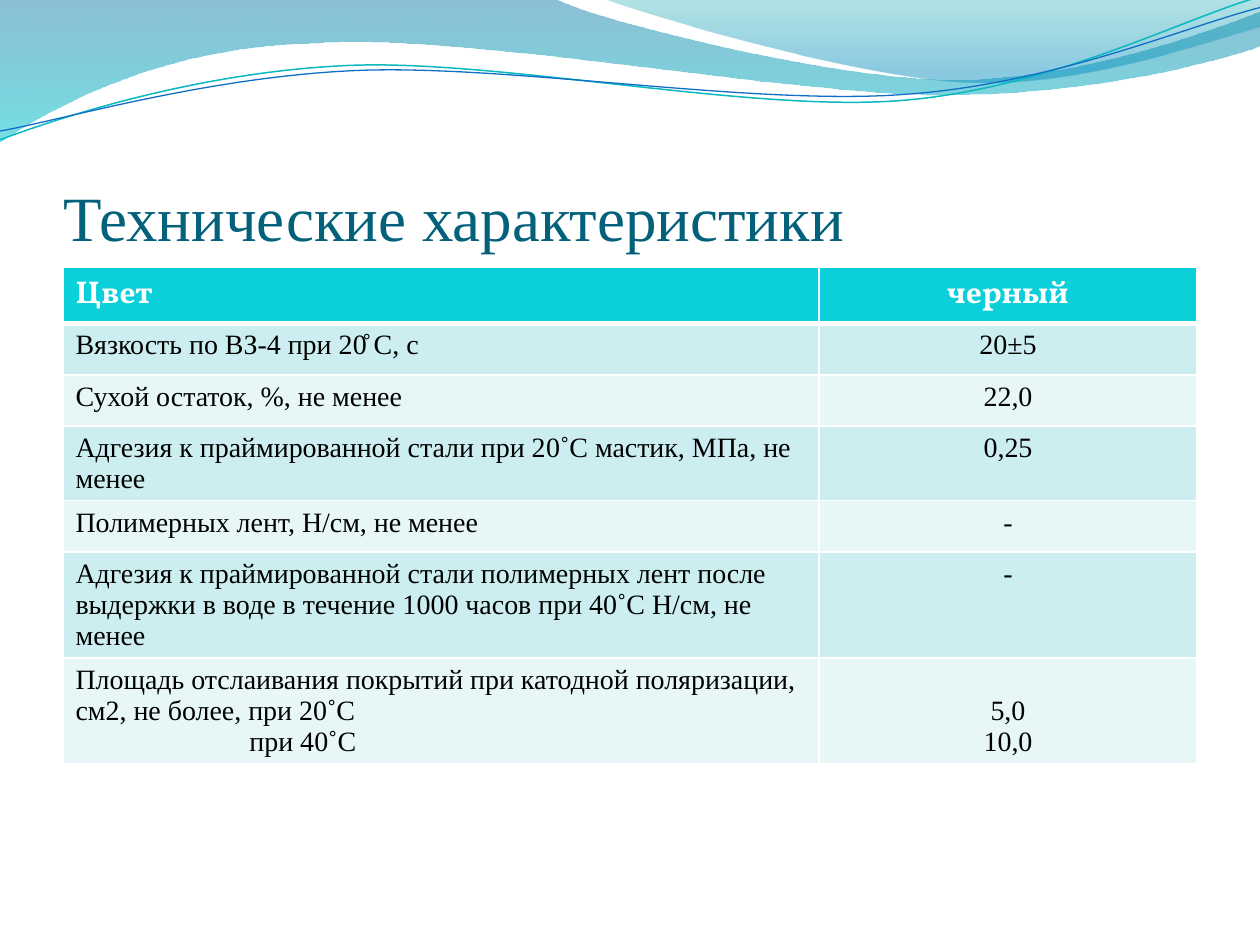
from lxml import etree
from pptx import Presentation
from pptx.dml.color import RGBColor
from pptx.enum.text import MSO_ANCHOR, MSO_AUTO_SIZE, PP_ALIGN
from pptx.oxml.ns import qn
from pptx.util import Inches, Pt

LEFT, CENTER = PP_ALIGN.LEFT, PP_ALIGN.CENTER
BOTTOM = MSO_ANCHOR.BOTTOM
SERIF, HEAD = "Times New Roman", "Vollkorn"
HEX = {"title": "04617B", "head": "0BD0D9", "odd": "CCEEF1", "even": "E7F7F8",
       "white": "FFFFFF", "black": "000000", "teal": "0AB8BF", "blue": "0F6FC6"}


def draw_wave(start, parts, close=False):
    """Draw parts from start: two numbers make a line, six a cubic curve."""
    form = slide.shapes.build_freeform(Inches(start[0]), Inches(start[1]))
    dots = [(Inches(part[i]), Inches(part[i + 1]))
            for part in parts for i in range(0, len(part), 2)]
    form.add_line_segments(dots, close=close)
    wave = form.convert_to_shape()
    wave.shadow.inherit = False
    # Join the three points of each curve into one cubic segment
    nodes = iter(list(wave.element.iter(qn("a:lnTo"))))
    for part in parts:
        first = next(nodes)
        if len(part) == 6:
            first.tag = qn("a:cubicBezTo")
            for _ in range(2):
                node = next(nodes)
                first.append(node[0])
                node.getparent().remove(node)
    return wave


def set_edge(cell, side, width):
    """Give one side of a cell a white border."""
    edge = etree.SubElement(cell._tc.get_or_add_tcPr(), qn("a:" + side), w=str(Pt(width)))
    fill = etree.SubElement(edge, qn("a:solidFill"))
    etree.SubElement(fill, qn("a:srgbClr"), val=HEX["white"])


prs = Presentation()
prs.slide_width, prs.slide_height = Inches(10), Inches(7.5)
slide = prs.slides.add_slide(prs.slide_layouts[5])

# Filled waves: start, parts, stops (position, colour, opacity %)
bands = [
    ((0, 0),
     [(4.4, -0.01), (4.76, 0.17, 6.64, 0.63, 7.58, 0.63),
      (8.53, 0.63, 9.58, 0.26, 10, 0.09), (10.01, 0.36),
      (9.83, 0.44, 8.7, 0.76, 7.46, 0.75), (6.22, 0.75, 3.82, 0.28, 2.57, 0.34),
      (1.29, 0.36, 0.46, 0.83, -0.01, 1.13), (0, 0)],
     [(0, "0074A1", 45), (1, "00C6CF", 55)]),
    ((4.79, -0.01),
     [(5.09, 0.11, 6.82, 0.62, 7.69, 0.65), (8.56, 0.69, 9.61, 0.32, 10, 0.21),
      (10, 0), (4.79, -0.01)],
     [(0, "00A1A9", 30), (0.8, "008BBF", 45)]),
]
for start, parts, stops in bands:
    band = draw_wave(start, parts, close=True)
    band.line.fill.background()
    band.fill.gradient()
    band.fill.gradient_angle = 270
    for stop, (place, tint, _) in zip(band.fill.gradient_stops, stops):
        stop.position = place
        stop.color.rgb = RGBColor.from_string(tint)
    for node, (_, _, alpha) in zip(band.element.iter(qn("a:srgbClr")), stops):
        etree.SubElement(node, qn("a:alpha"), val=str(alpha * 1000))

# Thin wave lines
lines = [
    ("teal", 0.85, (0, 1.11),
     [(0.48, 0.93, 1.58, 0.57, 2.77, 0.52), (3.95, 0.47, 5.93, 0.89, 7.13, 0.8),
      (8.33, 0.71, 9.38, 0.15, 9.98, -0.02)]),
    ("blue", 0.75, (0, 1.04),
     [(0.47, 0.96, 1.64, 0.61, 2.83, 0.56), (4.03, 0.51, 5.97, 0.84, 7.17, 0.75),
      (8.36, 0.67, 9.41, 0.21, 10, 0.06)]),
]
for tint, width, start, parts in lines:
    line = draw_wave(start, parts)
    line.fill.background()
    line.line.color.rgb = RGBColor.from_string(HEX[tint])
    line.line.width = Pt(width)

# Title, in front of the waves
title = slide.shapes.title
slide.shapes.element.append(title.element)
title.left, title.top = Inches(0.5), Inches(0.77)
title.width, title.height = Inches(9), Inches(1.25)
frame = title.text_frame
frame.text = "Технические характеристики"
frame.auto_size = MSO_AUTO_SIZE.NONE
frame.vertical_anchor = BOTTOM
frame.margin_left = frame.margin_right = frame.margin_bottom = 0
frame.margin_top = Inches(0.05)
para = frame.paragraphs[0]
para.alignment = LEFT
para.font.name, para.font.size = SERIF, Pt(36)
para.font.color.rgb = RGBColor.from_string(HEX["title"])

# Table of properties
rows = [
    ("Цвет", "черный"),
    ("Вязкость по ВЗ-4 при 20̊ С, с", "20±5"),
    ("Сухой остаток, %, не менее", "22,0"),
    ("Адгезия к праймированной стали при 20˚С мастик, МПа, не менее", "0,25"),
    ("Полимерных лент, Н/см, не менее", "-"),
    ("Адгезия к праймированной стали полимерных лент после выдержки в воде "
     "в течение 1000 часов при 40˚С Н/см, не менее", "-"),
    ("Площадь отслаивания покрытий при катодной поляризации, см2, не более, "
     "при 20˚С\nпри 40˚С", "5,0\n10,0"),
]
table = slide.shapes.add_table(len(rows), 2, Inches(0.5), Inches(2.12),
                               Inches(9), Inches(2.84)).table
table.columns[0].width, table.columns[1].width = Inches(6), Inches(3)
for r, row in enumerate(rows):
    top = r == 0
    shade = "head" if top else "odd" if r % 2 else "even"
    for c, text in enumerate(row):
        cell = table.cell(r, c)
        for side in ("lnL", "lnR", "lnT", "lnB"):
            thick = (top and side == "lnB") or (r == 1 and side == "lnT")
            set_edge(cell, side, 3 if thick else 1)
        cell.fill.solid()
        cell.fill.fore_color.rgb = RGBColor.from_string(HEX[shade])
        cell.text = text
        for para in cell.text_frame.paragraphs:
            para.alignment = CENTER if c else LEFT
            font = para.font
            font.name, font.size = (HEAD, Pt(18)) if top else (SERIF, Pt(16))
            font.bold = top
            font.color.rgb = RGBColor.from_string(HEX["white" if top else "black"])

# Last row: the second condition is indented, its values stand level with it
last = len(rows) - 1
para = table.cell(last, 0).text_frame.paragraphs[1]
para._p.get_or_add_pPr().set("marL", str(Inches(1.38)))
table.cell(last, 1).vertical_anchor = BOTTOM

prs.save("out.pptx")
